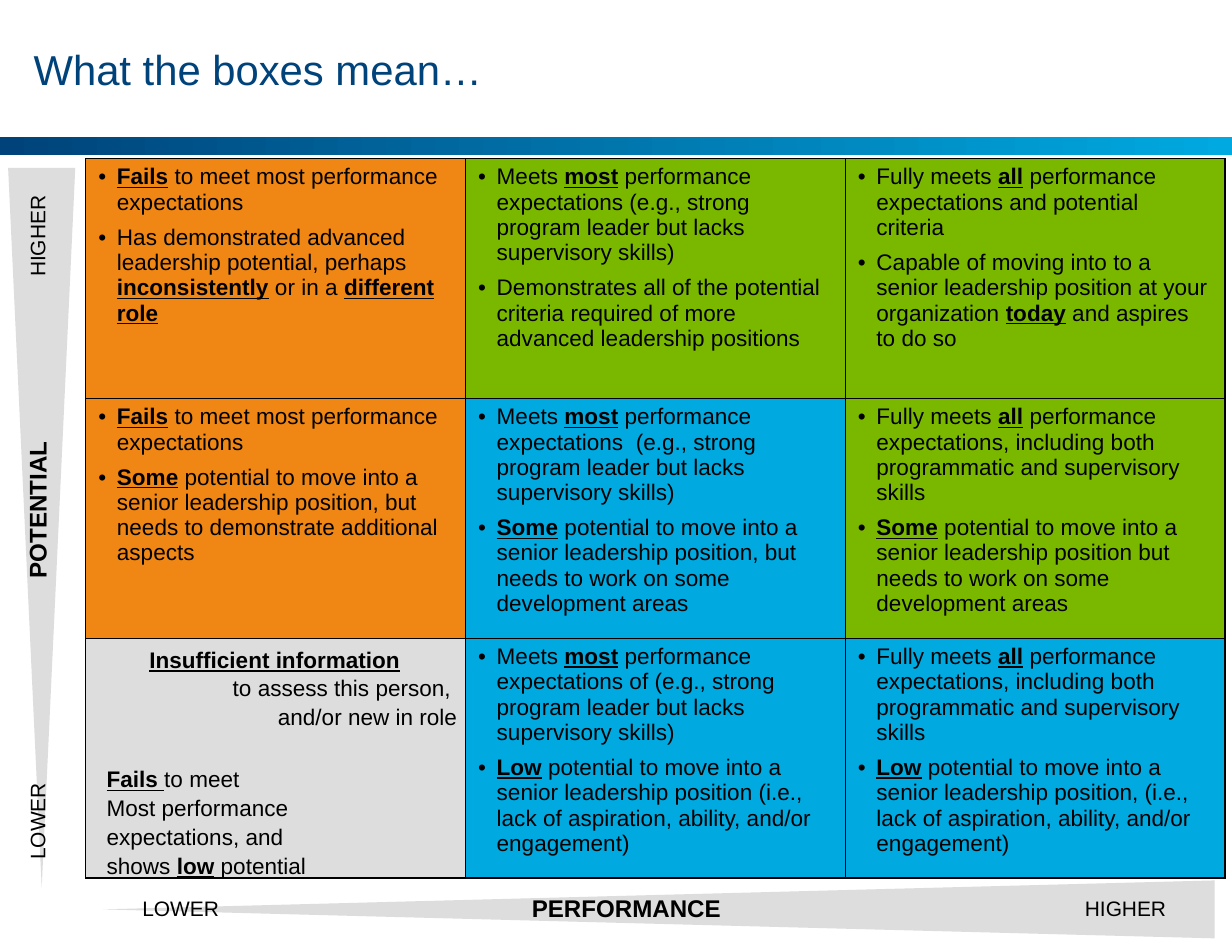
from lxml import etree
from pptx import Presentation
from pptx.dml.color import RGBColor
from pptx.enum.shapes import MSO_SHAPE
from pptx.enum.text import MSO_ANCHOR, PP_ALIGN
from pptx.oxml.ns import qn
from pptx.util import Pt

PX = 9144
RECTANGLE, TRIANGLE = MSO_SHAPE.RECTANGLE, MSO_SHAPE.ISOSCELES_TRIANGLE
LEFT, CENTER, RIGHT = PP_ALIGN.LEFT, PP_ALIGN.CENTER, PP_ALIGN.RIGHT
TOP, MIDDLE = MSO_ANCHOR.TOP, MSO_ANCHOR.MIDDLE

FONT = "Arial"
NAVY, SKY, ORANGE, GREEN = "00437A", "00A9E0", "F08613", "7AB800"
GREY, BLACK = "DDDDDD", "000000"

RATINGS = [
    [
        (ORANGE, ["*Fails* to meet most performance expectations",
                  "Has demonstrated advanced leadership potential, perhaps "
                  "*inconsistently* or in a *different role*"]),
        (GREEN, ["Meets *most* performance expectations (e.g., strong program "
                 "leader but lacks supervisory skills)",
                 "Demonstrates all of the potential criteria required of more "
                 "advanced leadership positions"]),
        (GREEN, ["Fully meets *all* performance expectations and potential criteria",
                 "Capable of moving into to a senior leadership position at your "
                 "organization *today* and aspires to do so"]),
    ],
    [
        (ORANGE, ["*Fails* to meet most performance expectations",
                  "*Some* potential to move into a senior leadership position, but "
                  "needs to demonstrate additional aspects"]),
        (SKY, ["Meets *most* performance expectations  (e.g., strong program "
               "leader but lacks supervisory skills)",
               "*Some* potential to move into a senior leadership position, but "
               "needs to work on some development areas"]),
        (GREEN, ["Fully meets *all* performance expectations, including both "
                 "programmatic and supervisory skills",
                 "*Some* potential to move into a senior leadership position but "
                 "needs to work on some development areas"]),
    ],
    [
        (GREY, []),
        (SKY, ["Meets *most* performance expectations of (e.g., strong program "
               "leader but lacks supervisory skills)",
               "*Low* potential to move into a senior leadership position (i.e., "
               "lack of aspiration, ability, and/or engagement)"]),
        (SKY, ["Fully meets *all* performance expectations, including both "
               "programmatic and supervisory skills",
               "*Low* potential to move into a senior leadership position, (i.e., "
               "lack of aspiration, ability, and/or engagement)"]),
    ],
]


def px(*lengths):
    """Turn px lengths into EMU."""
    return [round(length * PX) for length in lengths]


def rgb(hex_code):
    """Turn a hex string into a colour."""
    return RGBColor.from_string(hex_code)


def style(run, size, color=BLACK, bold=False, underline=False):
    """Format one run."""
    run.font.name, run.font.size = FONT, Pt(size)
    run.font.bold, run.font.underline = bold, underline
    run.font.color.rgb = rgb(color)


def write_marked(paragraph, marked):
    """Write text whose starred parts are bold and underlined."""
    for index, part in enumerate(marked.split("*")):
        if part:
            run = paragraph.add_run()
            run.text = part
            style(run, 14, bold=index % 2 == 1, underline=index % 2 == 1)


def paragraphs_for(frame, lines):
    """Pair each line with a paragraph of the frame."""
    for index, line in enumerate(lines):
        yield (frame.add_paragraph() if index else frame.paragraphs[0]), line


def add_bullet(paragraph):
    """Give a paragraph a black hanging bullet."""
    properties = paragraph._p.get_or_add_pPr()
    indent = px(16)[0]
    properties.set("marL", str(indent))
    properties.set("indent", str(-indent))
    color = etree.SubElement(properties, qn("a:buClr"))
    etree.SubElement(color, qn("a:srgbClr"), val=BLACK)
    etree.SubElement(properties, qn("a:buFont"), typeface=FONT)
    etree.SubElement(properties, qn("a:buChar"), char="•")


def add_borders(cell):
    """Draw a thin black line on each side of a cell."""
    properties = cell._tc.get_or_add_tcPr()
    for side in ("a:lnL", "a:lnR", "a:lnT", "a:lnB"):
        border = etree.SubElement(properties, qn(side), w=str(Pt(1)))
        fill = etree.SubElement(border, qn("a:solidFill"))
        etree.SubElement(fill, qn("a:srgbClr"), val=BLACK)


def set_margins(holder, across, down):
    """Set the inner margins of a text frame or cell."""
    holder.margin_left = holder.margin_right = px(across)[0]
    holder.margin_top = holder.margin_bottom = px(down)[0]


def add_title(slide, box):
    """Place the slide title."""
    title = slide.shapes.title
    title.left, title.top, title.width, title.height = px(*box)
    frame = title.text_frame
    frame.text = "What the boxes mean…"
    frame.vertical_anchor = MIDDLE
    set_margins(frame, 11, 5)
    frame.paragraphs[0].alignment = LEFT
    style(frame.paragraphs[0].runs[0], 26, NAVY)


def add_band(slide, box):
    """Draw the gradient band below the title."""
    band = slide.shapes.add_shape(RECTANGLE, *px(*box))
    band.shadow.inherit = False
    band.line.fill.background()
    band.fill.gradient()
    band.fill.gradient_angle = 0
    for stop, color, position in zip(band.fill.gradient_stops, (NAVY, SKY), (0, 1)):
        stop.color.rgb = rgb(color)
        stop.position = position


def add_axis(slide, box, name, labels, upright):
    """Draw a wedge with its labels, given as text, centre, length, size."""
    left, top, width, height = box
    middle_x, middle_y = left + width / 2, top + height / 2
    across, along = (width, height) if upright else (height, width)
    wedge = slide.shapes.add_shape(
        TRIANGLE, *px(middle_x - across / 2, middle_y - along / 2, across, along))
    wedge.rotation = 180 if upright else 270
    wedge.shadow.inherit = False
    wedge.line.fill.background()
    wedge.fill.solid()
    wedge.fill.fore_color.rgb = rgb(GREY)
    for text, centre, length, size in labels:
        x, y = (middle_x - 4, top + centre) if upright else (left + centre, middle_y - 1)
        label = slide.shapes.add_textbox(*px(x - length / 2, y - 17, length, 34))
        label.rotation = 270 if upright else 0
        frame = label.text_frame
        frame.word_wrap = True
        frame.vertical_anchor = MIDDLE
        set_margins(frame, 0, 0)
        frame.text = text
        frame.paragraphs[0].alignment = CENTER
        style(frame.paragraphs[0].runs[0], size, bold=text == name)


def add_ratings(slide, box):
    """Build the three by three grid of ratings."""
    grid = slide.shapes.add_table(3, 3, *px(*box)).table
    grid.first_row = grid.horz_banding = False
    for row_index, row in enumerate(RATINGS):
        for column_index, (color, points) in enumerate(row):
            cell = grid.cell(row_index, column_index)
            add_borders(cell)
            cell.fill.solid()
            cell.fill.fore_color.rgb = rgb(color)
            cell.vertical_anchor = TOP
            set_margins(cell, 11, 5)
            for paragraph, point in paragraphs_for(cell.text_frame, points):
                add_bullet(paragraph)
                paragraph.space_before = Pt(6 if point != points[0] else 0)
                write_marked(paragraph, point)


def add_lowest_rating(slide, box):
    """Place the two split notes of the lowest rating."""
    left, top = box[:2]
    notes = [
        (13, 103, 298, 104, LEFT, ["*Fails *to meet", "Most performance",
                                   "expectations, and", "shows *low* potential"]),
        (50, 0, 276, 34, LEFT, ["*Insufficient information*"]),
        (96, 24, 230, 57, RIGHT, ["to assess this person, ", "and/or new in role"]),
    ]
    for x, y, width, height, alignment, lines in notes:
        note = slide.shapes.add_textbox(*px(left + x, top + y, width, height))
        frame = note.text_frame
        frame.word_wrap = True
        set_margins(frame, 5, 5)
        for paragraph, line in paragraphs_for(frame, lines):
            paragraph.alignment = alignment
            paragraph.line_spacing = 1.07
            write_marked(paragraph, line)


def main():
    """Build and save the slide."""
    deck = Presentation()
    deck.slide_width, deck.slide_height = px(1064, 814)
    slide = deck.slides.add_slide(deck.slide_layouts[5])
    add_title(slide, (18, 9, 1020, 100))
    add_band(slide, (0, 118, 1064, 16))
    add_axis(slide, (89, 760, 960, 50), "PERFORMANCE",
             [("LOWER", 67, 100, 13), ("PERFORMANCE", 452, 266, 15),
              ("HIGHER", 883, 100, 13)], False)
    add_axis(slide, (7, 145, 58, 621), "POTENTIAL",
             [("HIGHER", 59, 100, 13), ("POTENTIAL", 295, 287, 15),
              ("LOWER", 564, 111, 13)], True)
    add_ratings(slide, (74, 137, 984, 621))
    add_lowest_rating(slide, (74, 551, 328, 207))
    deck.save("out.pptx")


if __name__ == "__main__":
    main()
